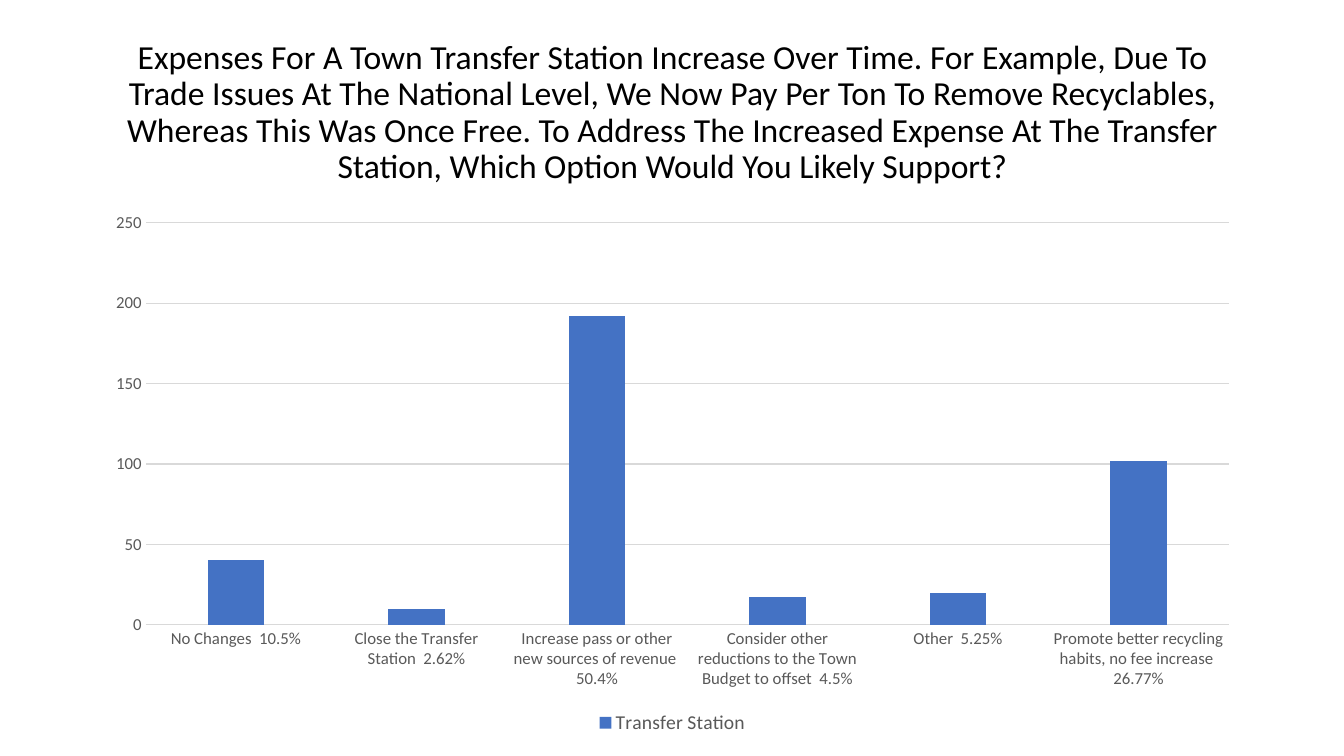
"""Build the slide on support for transfer station options."""
import pptx
import pptx.util
import pptx.chart.data
import pptx.dml.color
import pptx.enum.chart
import pptx.enum.text

RGBColor = pptx.dml.color.RGBColor
BLACK = RGBColor(0x00, 0x00, 0x00)
GRAY = RGBColor(0x59, 0x59, 0x59)
PALE = RGBColor(0xD9, 0xD9, 0xD9)
BLUE = RGBColor(0x44, 0x72, 0xC4)
FACE = "Calibri"


def box(*sizes):
    return [round(size * 914400 / 100.8) for size in sizes]


def style(item, **values):
    for name, value in values.items():
        setattr(item, name, value)


deck = pptx.Presentation()
deck.slide_width, deck.slide_height = box(1344, 756)
slide = deck.slides.add_slide(deck.slide_layouts[6])

title = slide.shapes.add_textbox(*box(93, 40, 1159, 146))
frame = title.text_frame
style(frame, word_wrap=True, vertical_anchor=pptx.enum.text.MSO_ANCHOR.MIDDLE)
para = frame.paragraphs[0]
para.text = (
    "Expenses For A Town Transfer Station Increase Over Time. "
    "For Example, Due To Trade Issues At The National Level, "
    "We Now Pay Per Ton To Remove Recyclables, Whereas This Was Once Free. "
    "To Address The Increased Expense At The Transfer Station, "
    "Which Option Would You Likely Support?"
)
style(para, alignment=pptx.enum.text.PP_ALIGN.CENTER, line_spacing=0.9)
style(para.runs[0].font, name=FACE, size=pptx.util.Pt(24))
para.runs[0].font.color.rgb = BLACK

votes = {
    "No Changes  10.5%": 40,
    "Close the Transfer Station  2.62%": 10,
    "Increase pass or other new sources of revenue  50.4%": 192,
    "Consider other reductions to the Town Budget to offset  4.5%": 17,
    "Other  5.25%": 20,
    "Promote better recycling habits, no fee increase  26.77%": 102,
}
data = pptx.chart.data.CategoryChartData()
data.categories = list(votes)
data.add_series("Transfer Station", list(votes.values()))
kind = pptx.enum.chart.XL_CHART_TYPE.COLUMN_CLUSTERED
chart = slide.shapes.add_chart(kind, *box(93, 202, 1159, 537), data).chart
style(chart, has_title=False, has_legend=True)
style(chart.font, name=FACE, size=pptx.util.Pt(10))

plot = chart.plots[0]
style(plot, gap_width=219, overlap=-27, vary_by_categories=False)
fill = plot.series[0].format.fill
fill.solid()
fill.fore_color.rgb = BLUE

legend = chart.legend
style(legend, position=pptx.enum.chart.XL_LEGEND_POSITION.BOTTOM,
      include_in_layout=False)

across, up = chart.category_axis, chart.value_axis
style(up, minimum_scale=0, maximum_scale=250, major_unit=50,
      has_major_gridlines=True)
for axis in (across, up):
    style(axis, major_tick_mark=pptx.enum.chart.XL_TICK_MARK.NONE,
          minor_tick_mark=pptx.enum.chart.XL_TICK_MARK.NONE)

for font, size in ((across.tick_labels.font, 12), (up.tick_labels.font, 12),
                   (legend.font, 14)):
    style(font, name=FACE, size=pptx.util.Pt(size))
    font.color.rgb = GRAY

for line in (across.format.line, up.major_gridlines.format.line):
    line.color.rgb = PALE
    line.width = pptx.util.Pt(0.75)
up.format.line.fill.background()

deck.save("out.pptx")
